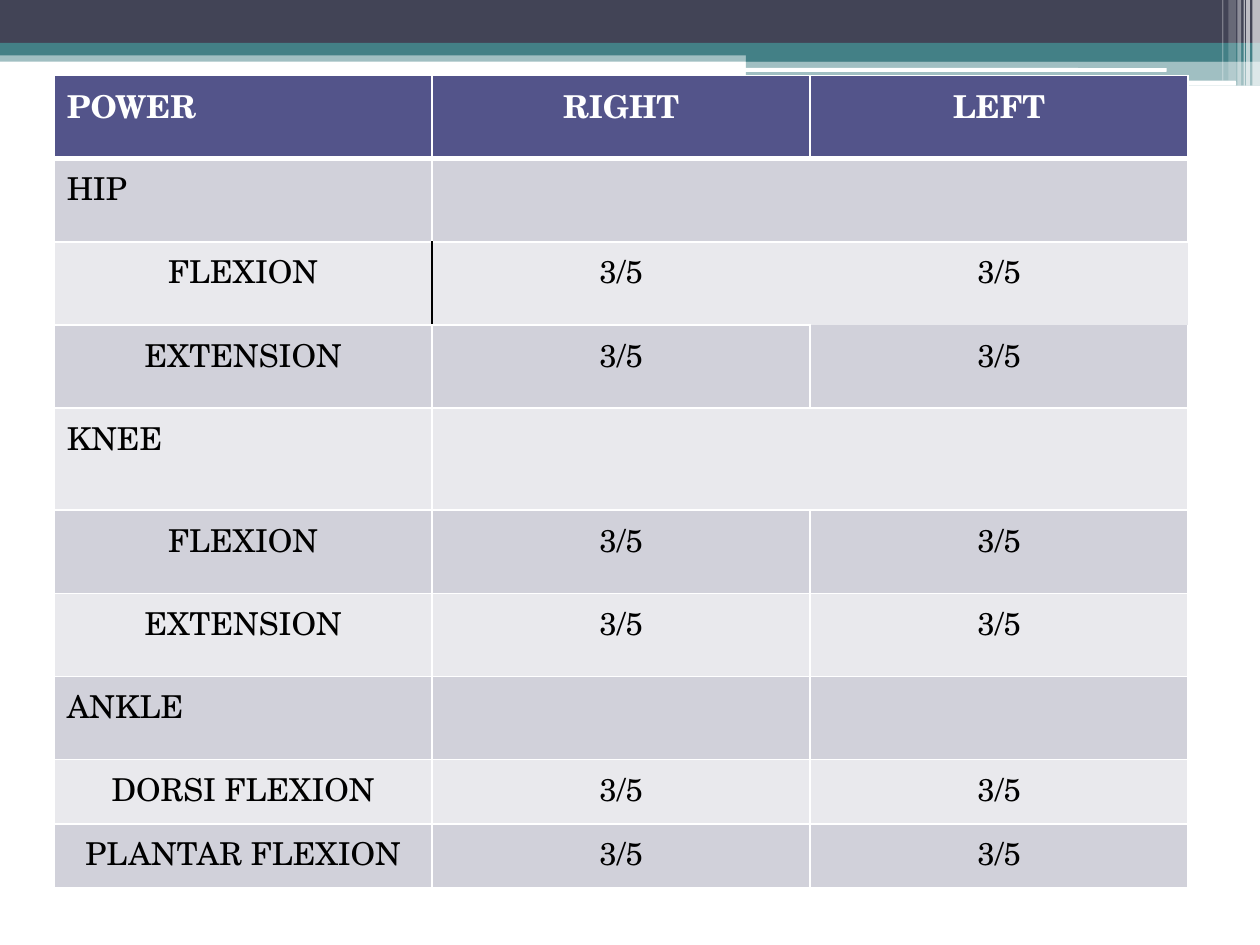
from dataclasses import dataclass

from lxml import etree
from pptx import Presentation
from pptx import util as u
from pptx.dml.color import RGBColor
from pptx.enum import shapes, text
from pptx.oxml.ns import qn

PX = u.Inches(1) // 100


@dataclass(frozen=True)
class Theme:
    font: str = "TeX Gyre Schola"
    size: int = 18
    white: str = "FFFFFF"
    black: str = "000000"
    navy: str = "424456"
    teal: str = "438086"
    head: str = "53548A"
    bands: tuple = ("E9E9ED", "D1D1DA")


T = Theme()
RECT = shapes.MSO_SHAPE.RECTANGLE
ROUND = shapes.MSO_SHAPE.ROUNDED_RECTANGLE

# left, top, width, height, colour, opacity in percent
BARS = [
    (0, 40, 1000, 9, T.teal, 50),
    (0, 0, 1000, 34, T.navy, 100),
    (0, 34, 1000, 10, T.teal, 100),
    (592, 39, 408, 10, T.teal, 100),
    (592, 48, 408, 20, T.teal, 50),
]
PILLS = [
    (591, 54, 335, 3, T.white, 100),
    (806, 64, 175, 4, T.white, 100),
]
# left, width, height, opacity
STRIPES = [
    (994, 6, 68, 65),
    (989, 3, 68, 65),
    (987, 1, 68, 60),
    (982, 3, 68, 40),
    (975, 6, 64, 20),
    (970, 1, 64, 30),
]

GRADE = "3/5"
GROUPS = {
    "HIP": ["FLEXION", "EXTENSION"],
    "KNEE": ["FLEXION", "EXTENSION"],
    "ANKLE": ["DORSI FLEXION", "PLANTAR FLEXION"],
}
HEIGHTS = [66] * 4 + [81] + [66] * 3 + [51] * 2
MERGED = (1, 4)


def add_bar(slide, kind, left, top, width, height, color, alpha):
    bar = slide.shapes.add_shape(kind, *(n * PX for n in (left, top, width, height)))
    bar.shadow.inherit = False
    bar.line.fill.background()
    bar.fill.solid()
    bar.fill.fore_color.rgb = RGBColor.from_string(color)
    if alpha < 100:
        tint = bar.fill._xPr.find(".//" + qn("a:srgbClr"))
        etree.SubElement(tint, qn("a:alpha"), val=str(alpha * 1000))


def add_edges(cell, lines):
    """Draw the L, R, T and B borders; each is (colour, points) or None."""
    props = cell._tc.get_or_add_tcPr()
    for spot, side in enumerate("LRTB"):
        line = etree.Element(qn("a:ln" + side))
        if lines[side]:
            color, width = lines[side]
            line.set("w", str(u.Pt(width)))
            fill = etree.SubElement(line, qn("a:solidFill"))
            etree.SubElement(fill, qn("a:srgbClr"), val=color)
        else:
            line.set("w", "0")
            etree.SubElement(line, qn("a:noFill"))
        props.insert(spot, line)


def find_edges(row, col):
    """Give the borders of a cell; the last flexion cell of the hip has none."""
    lines = dict.fromkeys("LRTB", (T.white, 1))
    if row == 0:
        lines["B"] = (T.white, 3)
    if row == 1:
        lines["T"] = (T.white, 3)
    special = {
        (1, 2): {"B": None},
        (2, 0): {"R": (T.black, 1)},
        (2, 1): {"L": (T.black, 1), "R": None},
        (2, 2): dict.fromkeys("LRTB"),
        (3, 2): {"T": None},
    }
    return lines | special.get((row, col), {})


def fill_cell(cell, words, color, ink, bold, center):
    cell.fill.solid()
    cell.fill.fore_color.rgb = RGBColor.from_string(color)
    cell.text = words
    para = cell.text_frame.paragraphs[0]
    para.alignment = text.PP_ALIGN.CENTER if center else text.PP_ALIGN.LEFT
    para.font.name = T.font
    para.font.size = u.Pt(T.size)
    para.font.bold = bold
    para.font.color.rgb = RGBColor.from_string(ink)


def list_rows():
    rows = [("POWER", "RIGHT", "LEFT")]
    for joint, moves in GROUPS.items():
        rows.append((joint, "", ""))
        rows += [(move, GRADE, GRADE) for move in moves]
    return rows


def add_power(slide):
    rows = list_rows()
    frame = slide.shapes.add_table(
        len(rows), 3, 43 * PX, 60 * PX, 900 * PX, sum(HEIGHTS) * PX)
    table = frame.table
    table.first_row = table.horz_banding = False
    for col in table.columns:
        col.width = 300 * PX
    for r, (words, height) in enumerate(zip(rows, HEIGHTS)):
        table.rows[r].height = height * PX
        top = r == 0
        color = T.head if top else T.bands[r % 2]
        ink = T.white if top else T.black
        for c, word in enumerate(words):
            cell = table.cell(r, c)
            center = c > 0 or not (top or word in GROUPS)
            fill_cell(cell, word, color, ink, top, center)
            add_edges(cell, find_edges(r, c))
    for r in MERGED:
        table.cell(r, 1).merge(table.cell(r, 2))


def main():
    deck = Presentation()
    deck.slide_width, deck.slide_height = 1000 * PX, 750 * PX
    slide = deck.slides.add_slide(deck.slide_layouts[6])
    for bar in BARS:
        add_bar(slide, RECT, *bar)
    for pill in PILLS:
        add_bar(slide, ROUND, *pill)
    for left, width, height, alpha in STRIPES:
        add_bar(slide, RECT, left, 0, width, height, T.white, alpha)
    add_power(slide)
    deck.save("out.pptx")


if __name__ == "__main__":
    main()
